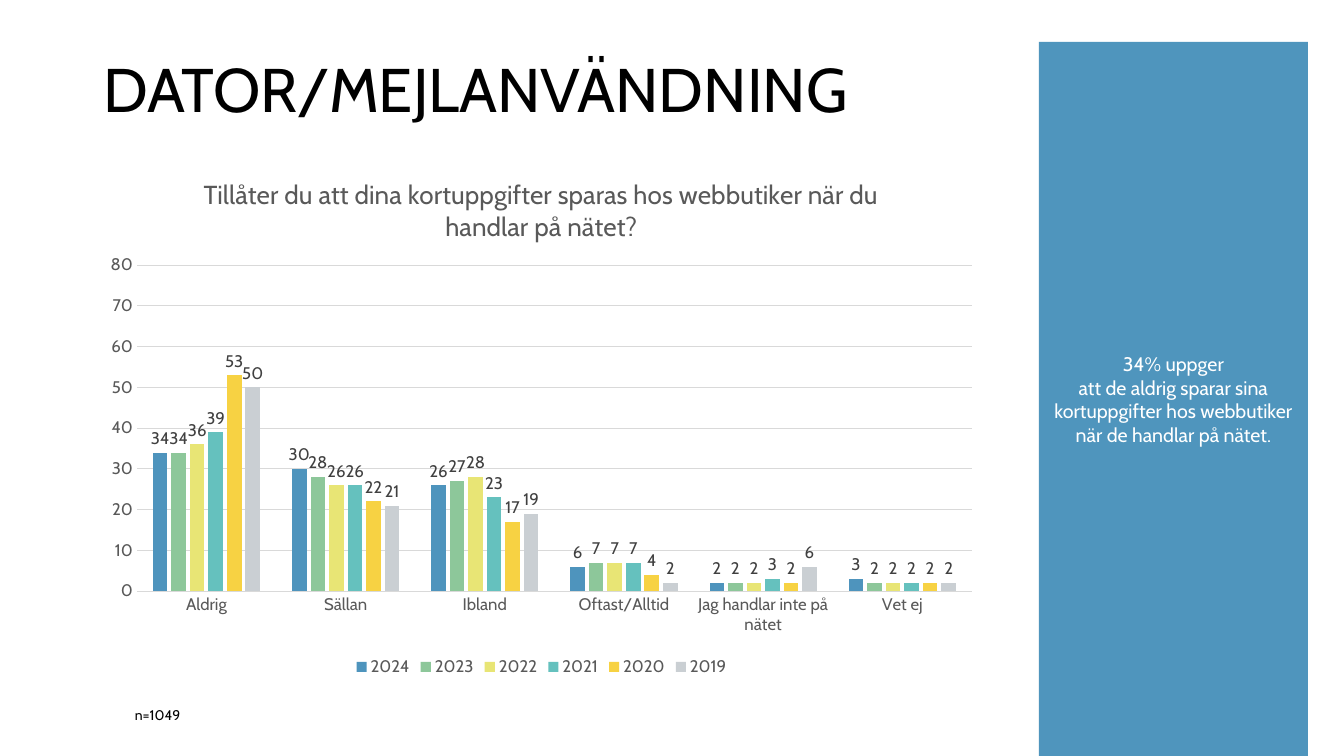
from dataclasses import dataclass

from lxml import etree
from pptx import Presentation
from pptx.chart.data import CategoryChartData
from pptx.dml.color import RGBColor
from pptx.enum.chart import (XL_CHART_TYPE, XL_LABEL_POSITION,
                             XL_LEGEND_POSITION, XL_TICK_MARK)
from pptx.enum.shapes import MSO_SHAPE
from pptx.enum.text import MSO_ANCHOR, MSO_AUTO_SIZE, PP_ALIGN
from pptx.oxml.ns import qn
from pptx.util import Emu, Pt

COLUMNS = XL_CHART_TYPE.COLUMN_CLUSTERED
OUTSIDE_END = XL_LABEL_POSITION.OUTSIDE_END
LEGEND_BOTTOM = XL_LEGEND_POSITION.BOTTOM
NO_TICK = XL_TICK_MARK.NONE

# Content
HEADING = "DATOR/MEJLANVÄNDNING"
QUESTION = ("Tillåter du att dina kortuppgifter sparas hos webbutiker "
            "när du handlar på nätet?")
ANSWERS = ["Aldrig", "Sällan", "Ibland", "Oftast/Alltid",
           "Jag handlar inte på nätet", "Vet ej"]
YEARS = [
    ("2024", "4E94BD", [34, 30, 26, 6, 2, 3]),
    ("2023", "8DC79A", [34, 28, 27, 7, 2, 2]),
    ("2022", "E8E575", [36, 26, 28, 7, 2, 2]),
    ("2021", "65C1BE", [39, 26, 23, 7, 3, 2]),
    ("2020", "F7D243", [53, 22, 17, 4, 2, 2]),
    ("2019", "CACFD3", [50, 21, 19, 2, 6, 2]),
]
SAMPLE = "n=1049"
FINDING = ("34% uppger\natt de aldrig sparar sina kortuppgifter "
           "hos webbutiker när de handlar på nätet.")

# Places in px: left, top, width, height
SLIDE_SIZE = (1344, 756)
HEADING_BOX = (93, 20, 1159, 146)
CHART_BOX = (93, 156, 897, 525)
PLOT_BOX = (137, 265, 835, 326)
SAMPLE_BOX = (125, 702, 998, 27)
FINDING_BOX = (1039, 42, 269, 714)


@dataclass(frozen=True)
class Theme:
    font: str = "Cabin"
    black: str = "000000"
    white: str = "FFFFFF"
    panel: str = "4F95BD"
    grey: str = "595959"
    label: str = "404040"
    grid: str = "D9D9D9"
    heading: float = 44
    question: float = 18.6
    body: float = 14
    chart: float = 12
    small: float = 10


THEME = Theme()


def px(*lengths):
    return [Emu(round(length * 914400 / 100.8)) for length in lengths]


def style(font, size, color):
    font.name, font.size, font.bold = THEME.font, Pt(size), False
    font.color.rgb = RGBColor.from_string(color)


def write(frame, text, size, color, align):
    frame.word_wrap = True
    paragraph = frame.paragraphs[0]
    paragraph.text, paragraph.alignment = text, align
    style(paragraph.font, size, color)
    return paragraph


def draw_line(line):
    line.color.rgb = RGBColor.from_string(THEME.grid)
    line.width = Pt(0.75)


def place_plot(chart):
    """Pin the inner plot area at PLOT_BOX, as fractions of the chart."""
    left, top, width, height = CHART_BOX
    plot_left, plot_top, plot_width, plot_height = PLOT_BOX
    values = [("layoutTarget", "inner"), ("xMode", "edge"), ("yMode", "edge"),
              ("x", round((plot_left - left) / width, 3)),
              ("y", round((plot_top - top) / height, 3)),
              ("w", round(plot_width / width, 3)),
              ("h", round(plot_height / height, 3))]
    area = chart.plots[0]._element.getparent()
    layout = area.find(qn("c:layout"))
    if layout is None:
        layout = etree.Element(qn("c:layout"))
        area.insert(0, layout)
    manual = etree.SubElement(layout, qn("c:manualLayout"))
    for tag, value in values:
        etree.SubElement(manual, qn(f"c:{tag}")).set("val", str(value))


def add_answers_chart(slide):
    data = CategoryChartData(number_format="0")
    data.categories = ANSWERS
    for year, _, shares in YEARS:
        data.add_series(year, shares)
    chart = slide.shapes.add_chart(COLUMNS, *px(*CHART_BOX), data).chart
    style(chart.font, THEME.small, THEME.black)

    # Question and legend
    chart.has_title = True
    question = chart.chart_title.text_frame.paragraphs[0]
    question.text = QUESTION
    style(question.font, THEME.question, THEME.grey)
    chart.chart_title.include_in_layout = False
    chart.has_legend = True
    chart.legend.position = LEGEND_BOTTOM
    chart.legend.include_in_layout = False
    style(chart.legend.font, THEME.chart, THEME.grey)

    # Axes
    answer_axis, share_axis = chart.category_axis, chart.value_axis
    for axis in (answer_axis, share_axis):
        axis.major_tick_mark = axis.minor_tick_mark = NO_TICK
        style(axis.tick_labels.font, THEME.chart, THEME.grey)
    draw_line(answer_axis.format.line)
    share_axis.format.line.fill.background()
    share_axis.minimum_scale, share_axis.maximum_scale = 0, 80
    share_axis.major_unit = 10
    draw_line(share_axis.major_gridlines.format.line)

    # Columns
    plot = chart.plots[0]
    plot.vary_by_categories = False
    plot.gap_width, plot.overlap = 219, -27
    for series, (_, color, _) in zip(plot.series, YEARS):
        series.format.fill.solid()
        series.format.fill.fore_color.rgb = RGBColor.from_string(color)
        labels = series.data_labels
        labels.show_value, labels.position = True, OUTSIDE_END
        style(labels.font, THEME.chart, THEME.label)
    place_plot(chart)


def main():
    deck = Presentation()
    deck.slide_width, deck.slide_height = px(*SLIDE_SIZE)
    slide = deck.slides.add_slide(deck.slide_layouts[5])

    # Heading
    heading = slide.shapes.title
    heading.left, heading.top, heading.width, heading.height = px(*HEADING_BOX)
    heading.text_frame.auto_size = MSO_AUTO_SIZE.NONE
    heading.text_frame.vertical_anchor = MSO_ANCHOR.MIDDLE
    write(heading.text_frame, HEADING, THEME.heading, THEME.black,
          PP_ALIGN.LEFT).line_spacing = 0.9

    add_answers_chart(slide)

    # Sample size
    sample = slide.shapes.add_textbox(*px(*SAMPLE_BOX)).text_frame
    write(sample, SAMPLE, THEME.small, THEME.black, PP_ALIGN.LEFT)

    # Finding panel
    panel = slide.shapes.add_shape(MSO_SHAPE.RECTANGLE, *px(*FINDING_BOX))
    panel.shadow.inherit = False
    panel.fill.solid()
    panel.fill.fore_color.rgb = RGBColor.from_string(THEME.panel)
    panel.line.fill.background()
    panel.text_frame.vertical_anchor = MSO_ANCHOR.MIDDLE
    write(panel.text_frame, FINDING, THEME.body, THEME.white, PP_ALIGN.CENTER)

    deck.save("out.pptx")


if __name__ == "__main__":
    main()
